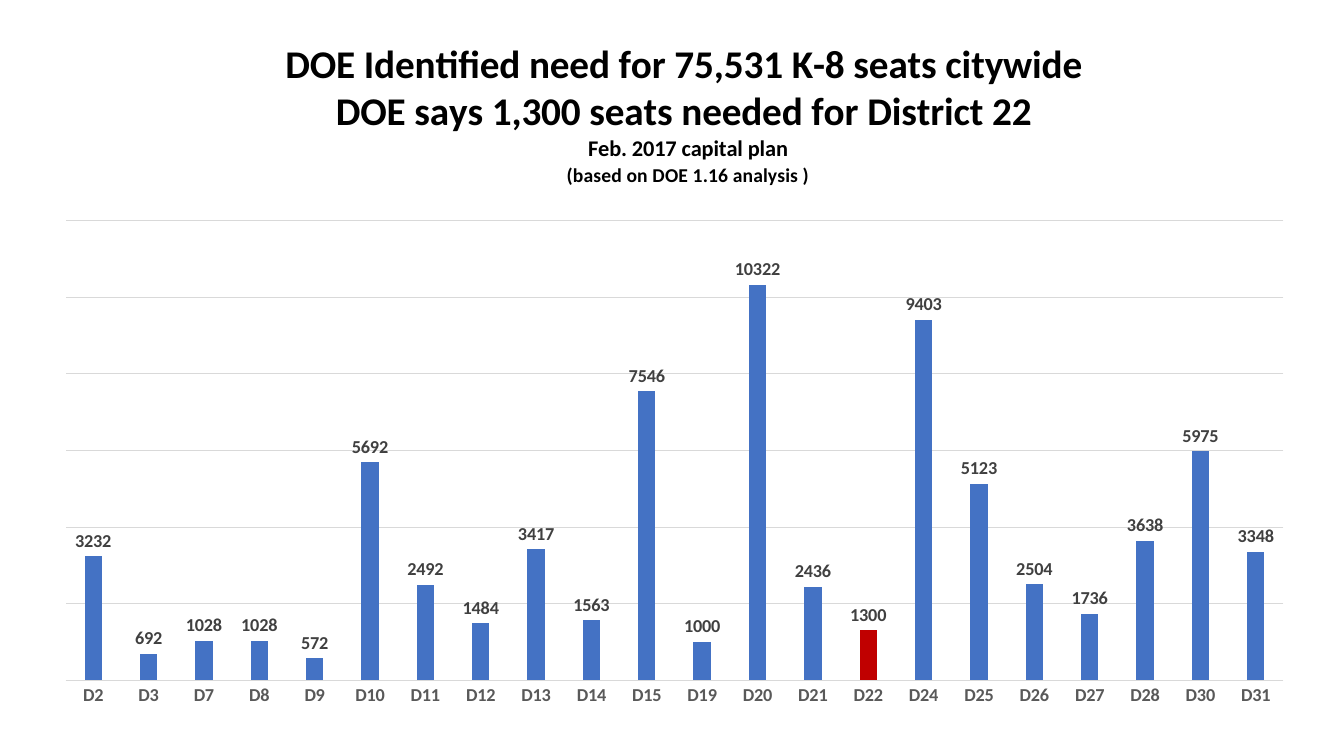
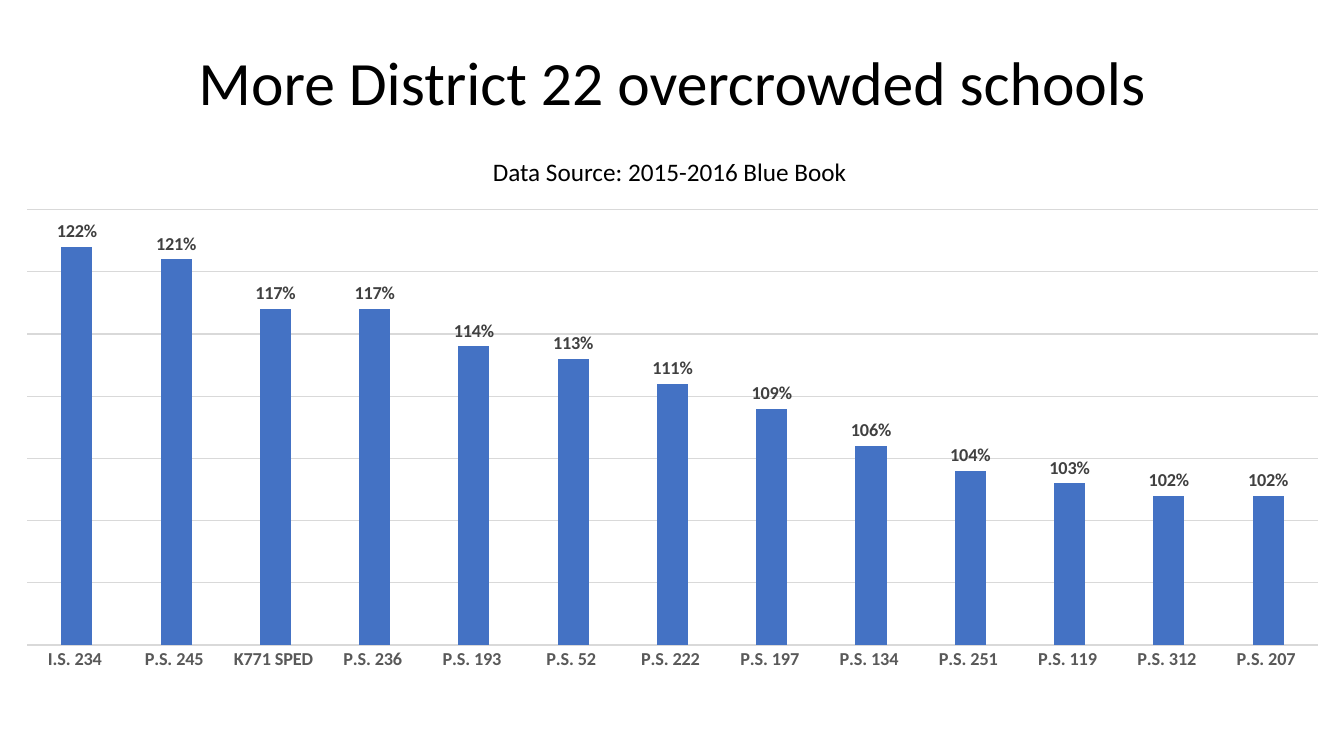
from dataclasses import dataclass, field

from lxml.etree import SubElement
from pptx import Presentation
from pptx.chart.chart import Chart
from pptx.chart.data import CategoryChartData
from pptx.dml.color import RGBColor
from pptx.enum.chart import XL_CHART_TYPE, XL_LABEL_POSITION, XL_TICK_MARK
from pptx.enum.text import MSO_ANCHOR, PP_ALIGN
from pptx.oxml.ns import qn
from pptx.slide import Slide
from pptx.util import Inches, Pt

COLUMNS = XL_CHART_TYPE.COLUMN_CLUSTERED
OUTSIDE_END = XL_LABEL_POSITION.OUTSIDE_END
NO_TICK = XL_TICK_MARK.NONE
CENTER = PP_ALIGN.CENTER
MIDDLE = MSO_ANCHOR.MIDDLE

FONT = "Calibri"
BLACK = "000000"
BLUE = "4472C4"
RED = "C00000"
GRID_GRAY = "D9D9D9"
AXIS_GRAY = "595959"
LABEL_GRAY = "404040"
TITLE_ONLY_LAYOUT = 5
BLANK_LAYOUT = 6


@dataclass(frozen=True)
class Area:
    left: float
    top: float
    width: float
    height: float


@dataclass(frozen=True)
class Line:
    text: str
    size: int
    bold: bool = False
    space_before: int = 0


@dataclass(frozen=True)
class ColumnChart:
    area: Area
    plot: Area
    values: dict[str, float]
    minimum: float
    maximum: float
    step: float
    number_format: str = "General"
    highlights: dict[str, str] = field(default_factory=dict)


SEATS = ColumnChart(
    area=Area(0.4, 0.33, 12.59, 6.83),
    plot=Area(0.65, 2.19, 12.08, 4.56),
    values={
        "D2": 3232, "D3": 692, "D7": 1028, "D8": 1028, "D9": 572,
        "D10": 5692, "D11": 2492, "D12": 1484, "D13": 3417, "D14": 1563,
        "D15": 7546, "D19": 1000, "D20": 10322, "D21": 2436, "D22": 1300,
        "D24": 9403, "D25": 5123, "D26": 2504, "D27": 1736, "D28": 3638,
        "D30": 5975, "D31": 3348,
    },
    minimum=0,
    maximum=12000,
    step=2000,
    highlights={"D22": RED},
)
SEATS_TITLE = [
    Line("DOE Identified need for 75,531 K-8 seats citywide ", 28, True),
    Line("DOE says 1,300 seats needed for District 22 ", 28, True),
    Line("Feb. 2017 capital plan", 16, True),
    Line("(based on DOE 1.16 analysis )", 14, True),
]
SEATS_TITLE_LEFT, SEATS_TITLE_TOP = 2.8, 0.36

SCHOOLS = ColumnChart(
    area=Area(0, 2, 13.33, 4.76),
    plot=Area(0.27, 2.08, 12.8, 4.32),
    values={
        "I.S. 234 ": 1.22, "P.S. 245 ": 1.21, "K771 SPED ": 1.17,
        "P.S. 236 ": 1.17, "P.S. 193 ": 1.14, "P.S. 52 ": 1.13,
        "P.S. 222 ": 1.11, "P.S. 197 ": 1.09, "P.S. 134 ": 1.06,
        "P.S. 251 ": 1.04, "P.S. 119 ": 1.03, "P.S. 312 ": 1.02,
        "P.S. 207 ": 1.02,
    },
    minimum=0.9,
    maximum=1.25,
    step=0.05,
    number_format="0%",
)
SCHOOLS_TITLE = [
    Line("More District 22 overcrowded schools", 44),
    Line("Data Source: 2015-2016 Blue Book ", 18, space_before=29),
]
SCHOOLS_TITLE_AREA = Area(0.92, 0.46, 11.5, 1.45)


def color(value: str) -> RGBColor:
    return RGBColor.from_string(value)


def style_font(font, size: int, value: str, bold: bool = False) -> None:
    font.name = FONT
    font.size = Pt(size)
    font.bold = bold
    font.color.rgb = color(value)


def write_lines(frame, lines: list[Line]) -> None:
    for index, line in enumerate(lines):
        para = frame.add_paragraph() if index else frame.paragraphs[0]
        para.text = line.text
        para.alignment = CENTER
        if line.space_before:
            para.space_before = Pt(line.space_before)
        style_font(para.font, line.size, BLACK, line.bold)


def set_layout(parent, index: int, settings: dict[str, object]) -> None:
    for old in parent.findall(qn("c:layout")):
        parent.remove(old)
    layout = SubElement(parent, qn("c:layout"))
    parent.insert(index, layout)
    manual = SubElement(layout, qn("c:manualLayout"))
    for name, value in settings.items():
        SubElement(manual, qn(f"c:{name}")).set("val", str(value))


def place_plot(chart: Chart, area: Area, plot: Area) -> None:
    plot_area = chart.element.xpath(".//c:plotArea")[0]
    set_layout(plot_area, 0, {
        "layoutTarget": "inner",
        "xMode": "edge",
        "yMode": "edge",
        "x": (plot.left - area.left) / area.width,
        "y": (plot.top - area.top) / area.height,
        "w": plot.width / area.width,
        "h": plot.height / area.height,
    })


def add_chart_title(chart: Chart, lines: list[Line], area: Area,
                    left: float, top: float) -> None:
    chart.has_title = True
    write_lines(chart.chart_title.text_frame, lines)
    title = chart.element.xpath("./c:chart/c:title")[0]
    set_layout(title, 1, {
        "xMode": "edge",
        "yMode": "edge",
        "x": (left - area.left) / area.width,
        "y": (top - area.top) / area.height,
    })


def style_line(line) -> None:
    line.color.rgb = color(GRID_GRAY)
    line.width = Pt(0.75)


def add_columns(page: Slide, columns: ColumnChart) -> Chart:
    data = CategoryChartData(number_format=columns.number_format)
    data.categories = list(columns.values)
    data.add_series("Series 1", list(columns.values.values()))
    area = columns.area
    chart = page.shapes.add_chart(
        COLUMNS, Inches(area.left), Inches(area.top),
        Inches(area.width), Inches(area.height), data).chart
    chart.has_title = False
    chart.has_legend = False
    style_font(chart.font, 10, BLACK)
    place_plot(chart, area, columns.plot)

    category_axis = chart.category_axis
    category_axis.major_tick_mark = NO_TICK
    category_axis.minor_tick_mark = NO_TICK
    style_font(category_axis.tick_labels.font, 13, AXIS_GRAY, True)
    style_line(category_axis.format.line)

    value_axis = chart.value_axis
    value_axis.visible = False
    value_axis.minimum_scale = columns.minimum
    value_axis.maximum_scale = columns.maximum
    value_axis.major_unit = columns.step
    value_axis.has_major_gridlines = True
    style_line(value_axis.major_gridlines.format.line)

    plot = chart.plots[0]
    plot.gap_width = 219
    plot.overlap = -27
    plot.vary_by_categories = False
    series = plot.series[0]
    series.format.fill.solid()
    series.format.fill.fore_color.rgb = color(BLUE)
    names = list(columns.values)
    for name, value in columns.highlights.items():
        fill = series.points[names.index(name)].format.fill
        fill.solid()
        fill.fore_color.rgb = color(value)

    labels = series.data_labels
    labels.show_value = True
    labels.position = OUTSIDE_END
    labels.number_format = columns.number_format
    labels.number_format_is_linked = False
    style_font(labels.font, 13, LABEL_GRAY, True)
    return chart


def set_page_title(page: Slide, lines: list[Line], area: Area) -> None:
    title = page.shapes.title
    title.left, title.top = Inches(area.left), Inches(area.top)
    title.width, title.height = Inches(area.width), Inches(area.height)
    frame = title.text_frame
    frame.word_wrap = True
    frame.vertical_anchor = MIDDLE
    write_lines(frame, lines)
    for para in frame.paragraphs:
        para.line_spacing = 0.9


def main() -> None:
    deck = Presentation()
    deck.slide_width, deck.slide_height = Inches(13.33), Inches(7.5)

    seats_page = deck.slides.add_slide(deck.slide_layouts[BLANK_LAYOUT])
    seats_chart = add_columns(seats_page, SEATS)
    add_chart_title(seats_chart, SEATS_TITLE, SEATS.area,
                    SEATS_TITLE_LEFT, SEATS_TITLE_TOP)

    schools_page = deck.slides.add_slide(deck.slide_layouts[TITLE_ONLY_LAYOUT])
    set_page_title(schools_page, SCHOOLS_TITLE, SCHOOLS_TITLE_AREA)
    add_columns(schools_page, SCHOOLS)

    deck.save("out.pptx")


if __name__ == "__main__":
    main()
